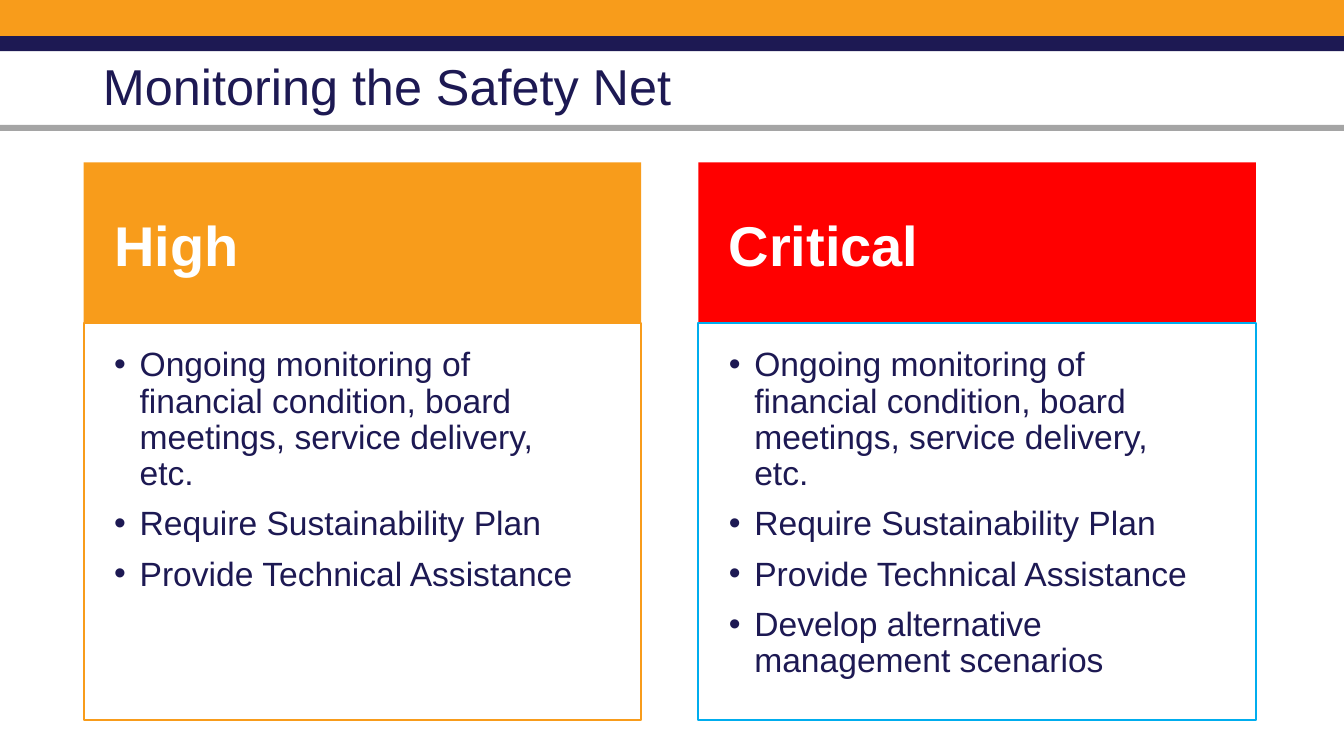
from lxml import etree
from pptx import Presentation
from pptx.dml.color import RGBColor
from pptx.enum.shapes import MSO_SHAPE
from pptx.enum.text import MSO_ANCHOR, MSO_AUTO_SIZE, PP_ALIGN
from pptx.oxml.ns import qn
from pptx.util import Cm, Pt

RECTANGLE = MSO_SHAPE.RECTANGLE
TOP, MIDDLE = MSO_ANCHOR.TOP, MSO_ANCHOR.MIDDLE
NO_AUTOFIT = MSO_AUTO_SIZE.NONE
LEFT = PP_ALIGN.LEFT

FONT = "Arial"
ORANGE, NAVY, GREY = "F89C1B", "1D1953", "A5A5A5"
RED, BLUE, WHITE = "FF0000", "00ADEE", "FFFFFF"

SLIDE_WIDTH, SLIDE_HEIGHT = 33.87, 19.05
CARD_WIDTH, CARD_TOP = 14.05, 4.09
HEADER_HEIGHT, PANEL_HEIGHT = 4.06, 10.01
PANEL_TOP = 8.13
TEXT_INSET = 0.52
BULLET_INDENT = Cm(0.64)

SHARED_ACTIONS = [
    "Ongoing monitoring of financial condition, board meetings, service delivery, etc.",
    "Require Sustainability Plan",
    "Provide Technical Assistance",
]
# Heading, actions, left edge, header fill, panel line, heading width, text size
LEVELS = [
    ("High", SHARED_ACTIONS, 2.11, ORANGE, ORANGE, 12.42, (12.55, 9.5)),
    ("Critical", SHARED_ACTIONS + ["Develop alternative management scenarios"],
     17.6, RED, BLUE, 14.94, (12.45, 9.93)),
]
# Top, height, colour
BANDS = [(0, 1.02, ORANGE), (0.91, 0.38, NAVY), (3.15, 0.15, GREY)]


def colour(hex_code):
    return RGBColor.from_string(hex_code)


def add_box(slide, left, top, width, height, fill=None, line=None):
    box = slide.shapes.add_shape(RECTANGLE, Cm(left), Cm(top), Cm(width), Cm(height))
    box.shadow.inherit = False
    if fill:
        box.fill.solid()
        box.fill.fore_color.rgb = colour(fill)
    else:
        box.fill.background()
    if line:
        box.line.color.rgb = colour(line)
        box.line.width = Pt(1.5)
    else:
        box.line.fill.background()


def add_bullet(paragraph):
    properties = paragraph._p.get_or_add_pPr()
    properties.set("marL", str(BULLET_INDENT))
    properties.set("indent", str(-BULLET_INDENT))
    etree.SubElement(properties, qn("a:buFont")).set("typeface", FONT)
    etree.SubElement(properties, qn("a:buChar")).set("char", "•")


def write_text(frame, lines, size=24, color=NAVY, bold=False, before=10,
               anchor=TOP, bullets=False):
    frame.word_wrap = True
    frame.auto_size = NO_AUTOFIT
    frame.vertical_anchor = anchor
    for index, line in enumerate(lines):
        paragraph = frame.add_paragraph() if index else frame.paragraphs[0]
        paragraph.alignment = LEFT
        paragraph.line_spacing = 0.9
        paragraph.space_before = Pt(before)
        if bullets:
            add_bullet(paragraph)
        run = paragraph.add_run()
        run.text = line
        run.font.name = FONT
        run.font.size = Pt(size)
        run.font.bold = bold
        run.font.color.rgb = colour(color)


def add_text(slide, lines, left, top, width, height, **text_format):
    text_box = slide.shapes.add_textbox(Cm(left), Cm(top), Cm(width), Cm(height))
    write_text(text_box.text_frame, lines, **text_format)


def add_title(slide, wording):
    title = slide.shapes.title
    title.left, title.top = Cm(2.34), Cm(0.41)
    title.width, title.height = Cm(31.55), Cm(3.68)
    write_text(title.text_frame, [wording], size=36, before=0, anchor=MIDDLE)
    # Bring the title in front of the bands
    slide.shapes._spTree.append(title._element)


def add_level(slide, heading, actions, left, header_fill, panel_line,
              heading_width, actions_size):
    text_left = left + TEXT_INSET
    add_box(slide, left, CARD_TOP, CARD_WIDTH, HEADER_HEIGHT, fill=header_fill)
    add_box(slide, left, PANEL_TOP, CARD_WIDTH, PANEL_HEIGHT, line=panel_line)
    add_text(slide, [heading], text_left, 5.38, heading_width, 2.49,
             size=40, color=WHITE, bold=True)
    add_text(slide, actions, text_left, 8.64, *actions_size, bullets=True)


def main():
    presentation = Presentation()
    presentation.slide_width = Cm(SLIDE_WIDTH)
    presentation.slide_height = Cm(SLIDE_HEIGHT)
    slide = presentation.slides.add_slide(presentation.slide_layouts[5])

    # Bands across the top
    for top, height, fill in BANDS:
        add_box(slide, 0, top, SLIDE_WIDTH, height, fill=fill)

    # Risk levels side by side
    for level in LEVELS:
        add_level(slide, *level)

    add_title(slide, "Monitoring the Safety Net")
    presentation.save("out.pptx")


if __name__ == "__main__":
    main()
